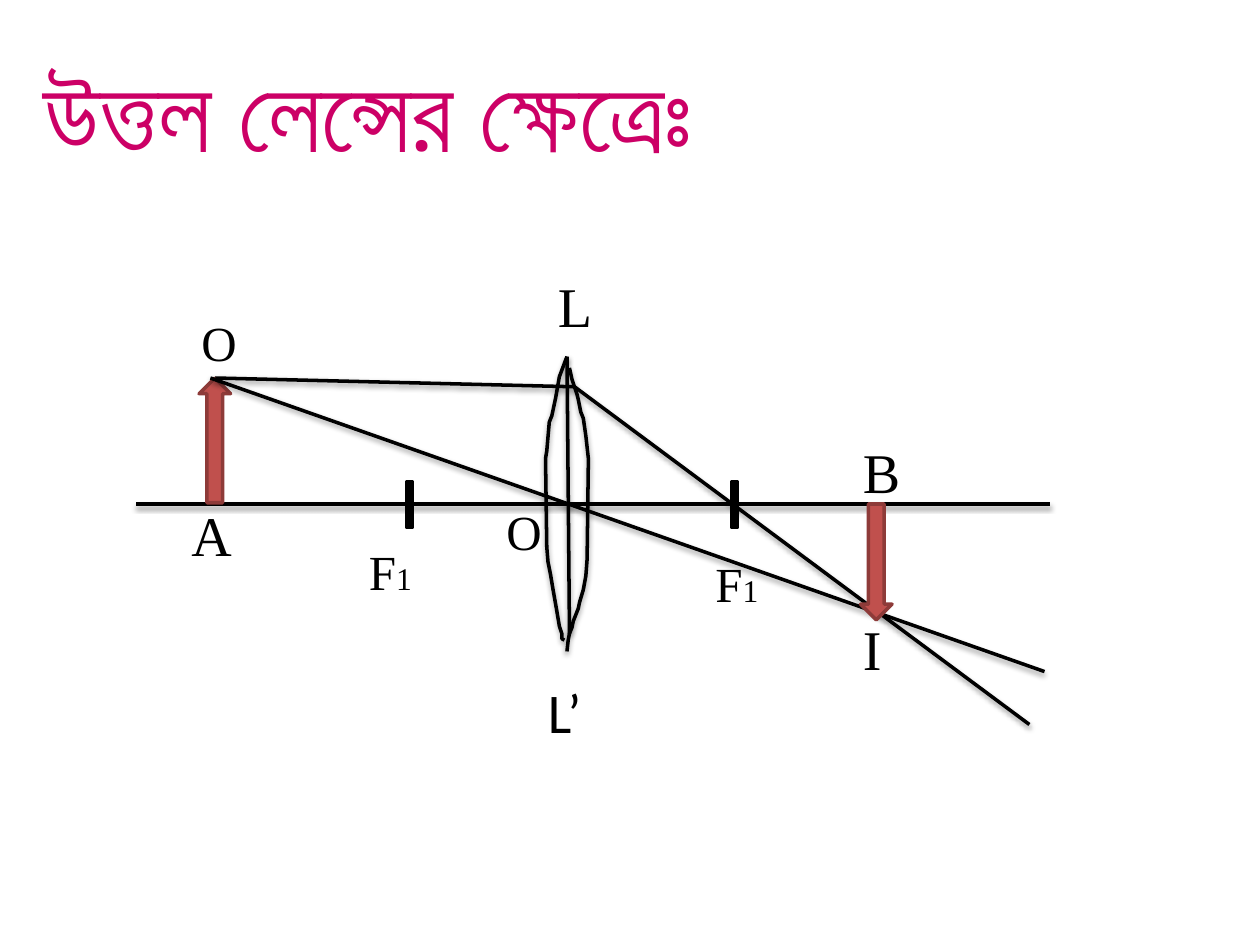
from dataclasses import dataclass
from lxml import etree
from pptx import Presentation
from pptx.dml.color import RGBColor
from pptx.enum import shapes, text
from pptx.oxml.ns import qn
from pptx.util import Inches, Pt

Point = tuple[float, float]


@dataclass(frozen=True)
class Theme:
    ink: str = "000000"
    arrow: str = "C0504D"
    arrow_edge: str = "8E3B39"
    title: str = "CC0066"
    serif: str = "Times New Roman"
    sans: str = "Calibri"
    title_font: str = "Arial"
    title_size: int = 60
    large: int = 32
    medium: int = 28
    small: int = 18
    line: float = 2


THEME = Theme()


@dataclass(frozen=True)
class Label:
    words: str
    left: float
    top: float
    width: float
    height: float = 0.64
    size: int = THEME.large
    font: str = THEME.serif
    color: str = THEME.ink
    index: str = ""


@dataclass(frozen=True)
class Solid:
    kind: shapes.MSO_SHAPE
    left: float
    top: float
    width: float
    height: float
    fill: str
    edge: str
    rotation: float = 0


OBJECT_TIP, FOCUS_RAY_BEND = (1.71, 3), (4.56, 3.07)
LINES: list[tuple[Point, Point]] = [
    ((4.5, 2.83), (4.52, 5.03)),
    ((1.08, 4), (8.33, 4)),
    (OBJECT_TIP, FOCUS_RAY_BEND),
    (FOCUS_RAY_BEND, (8.17, 5.75)),
    ((1.67, 3), (8.29, 5.33)),
]

LENS_FACES: list[list[Point]] = [
    [(4.5, 2.83), (4.44, 2.99), (4.41, 3.16), (4.38, 3.3), (4.36, 3.35),
     (4.34, 3.58), (4.33, 3.64), (4.34, 4.34), (4.35, 4.46), (4.37, 4.56),
     (4.39, 4.68), (4.42, 4.85), (4.44, 4.97), (4.46, 5.03), (4.46, 5.07),
     (4.48, 5.08)],
    [(4.52, 2.92), (4.54, 3.01), (4.56, 3.07), (4.58, 3.13), (4.59, 3.17),
     (4.61, 3.27), (4.63, 3.32), (4.65, 3.46), (4.67, 3.64), (4.66, 4.44),
     (4.65, 4.57), (4.63, 4.68), (4.6, 4.78), (4.59, 4.83), (4.55, 4.93),
     (4.54, 4.98), (4.52, 5.03), (4.51, 5.08), (4.5, 5.17)],
]

FOCUS_MARKS = [
    Solid(shapes.MSO_SHAPE.MATH_MINUS, left, 3.92, 0.5, 0.17, THEME.ink, THEME.ink, 90)
    for left in (5.58, 3)
]
OBJECT_ARROW = Solid(shapes.MSO_SHAPE.UP_ARROW, 1.58, 3, 0.25, 0.99,
                     THEME.arrow, THEME.arrow_edge)
IMAGE_ARROW = Solid(shapes.MSO_SHAPE.DOWN_ARROW, 6.83, 4, 0.25, 0.92,
                    THEME.arrow, THEME.arrow_edge)

LABELS = [
    Label("L", 4.33, 2.11, 1.08),
    Label("L’", 4.25, 5.33, 1.08, font=THEME.sans),
    Label("O", 3.92, 3.93, 0.33, 0.57, THEME.medium),
    Label("F", 2.83, 4.25, 0.83, 0.57, THEME.medium, index="1"),
    Label("A", 1.42, 3.92, 0.75),
    Label("B", 6.75, 3.42, 0.83),
    Label("F", 5.58, 4.34, 0.83, 0.57, THEME.medium, index="1"),
    Label("O", 1.5, 2.43, 0.33, 0.57, THEME.medium),
    Label("I", 6.75, 4.83, 0.58),
    Label("উত্তল লেন্সের ক্ষেত্রেঃ", 0.25, 0.33, 6.33, 1.11,
          THEME.title_size, THEME.title_font, THEME.title),
]


def set_line(sp, color: str) -> None:
    sp.line.color.rgb = RGBColor.from_string(color)
    sp.line.width = Pt(THEME.line)


def add_soft_shadow(sp) -> None:
    """Give a stroked object a faint shadow straight below it."""
    effects = etree.SubElement(sp._element.spPr, qn("a:effectLst"))
    shadow = etree.SubElement(effects, qn("a:outerShdw"))
    values = {"blurRad": Pt(3.1), "dist": Pt(1.6), "dir": 90 * 60000, "rotWithShape": 0}
    for name, value in values.items():
        shadow.set(name, str(int(value)))
    color = etree.SubElement(shadow, qn("a:srgbClr"), val=THEME.ink)
    etree.SubElement(color, qn("a:alpha"), val="38000")


def draw_line(s, start: Point, end: Point) -> None:
    sp = s.shapes.add_connector(
        shapes.MSO_CONNECTOR.STRAIGHT, *(Inches(v) for v in (*start, *end)))
    set_line(sp, THEME.ink)
    add_soft_shadow(sp)


def draw_lens_face(s, points: list[Point]) -> None:
    first, *rest = [(Inches(x), Inches(y)) for x, y in points]
    builder = s.shapes.build_freeform(*first)
    builder.add_line_segments(rest, close=False)
    sp = builder.convert_to_shape()
    sp.fill.background()
    set_line(sp, THEME.ink)
    add_soft_shadow(sp)


def draw_solid(s, solid: Solid) -> None:
    box = (solid.left, solid.top, solid.width, solid.height)
    sp = s.shapes.add_shape(solid.kind, *(Inches(v) for v in box))
    sp.rotation = solid.rotation
    sp.shadow.inherit = False
    sp.fill.solid()
    sp.fill.fore_color.rgb = RGBColor.from_string(solid.fill)
    set_line(sp, solid.edge)


def draw_label(s, label: Label) -> None:
    box = (label.left, label.top, label.width, label.height)
    tf = s.shapes.add_textbox(*(Inches(v) for v in box)).text_frame
    tf.word_wrap = True
    tf.auto_size = text.MSO_AUTO_SIZE.SHAPE_TO_FIT_TEXT
    p = tf.paragraphs[0]
    for words, size in ((label.words, label.size), (label.index, THEME.small)):
        if words:
            r = p.add_run()
            r.text = words
            for name, value in {"name": label.font, "size": Pt(size)}.items():
                setattr(r.font, name, value)
            r.font.color.rgb = RGBColor.from_string(label.color)


def main() -> None:
    prs = Presentation()
    prs.slide_width, prs.slide_height = Inches(10), Inches(7.5)
    s = prs.slides.add_slide(prs.slide_layouts[6])
    for face in LENS_FACES:
        draw_lens_face(s, face)
    for start, end in LINES[:2]:
        draw_line(s, start, end)
    for solid in (*FOCUS_MARKS, OBJECT_ARROW):
        draw_solid(s, solid)
    for start, end in LINES[2:]:
        draw_line(s, start, end)
    draw_solid(s, IMAGE_ARROW)
    for label in LABELS:
        draw_label(s, label)
    prs.save("out.pptx")


if __name__ == "__main__":
    main()
